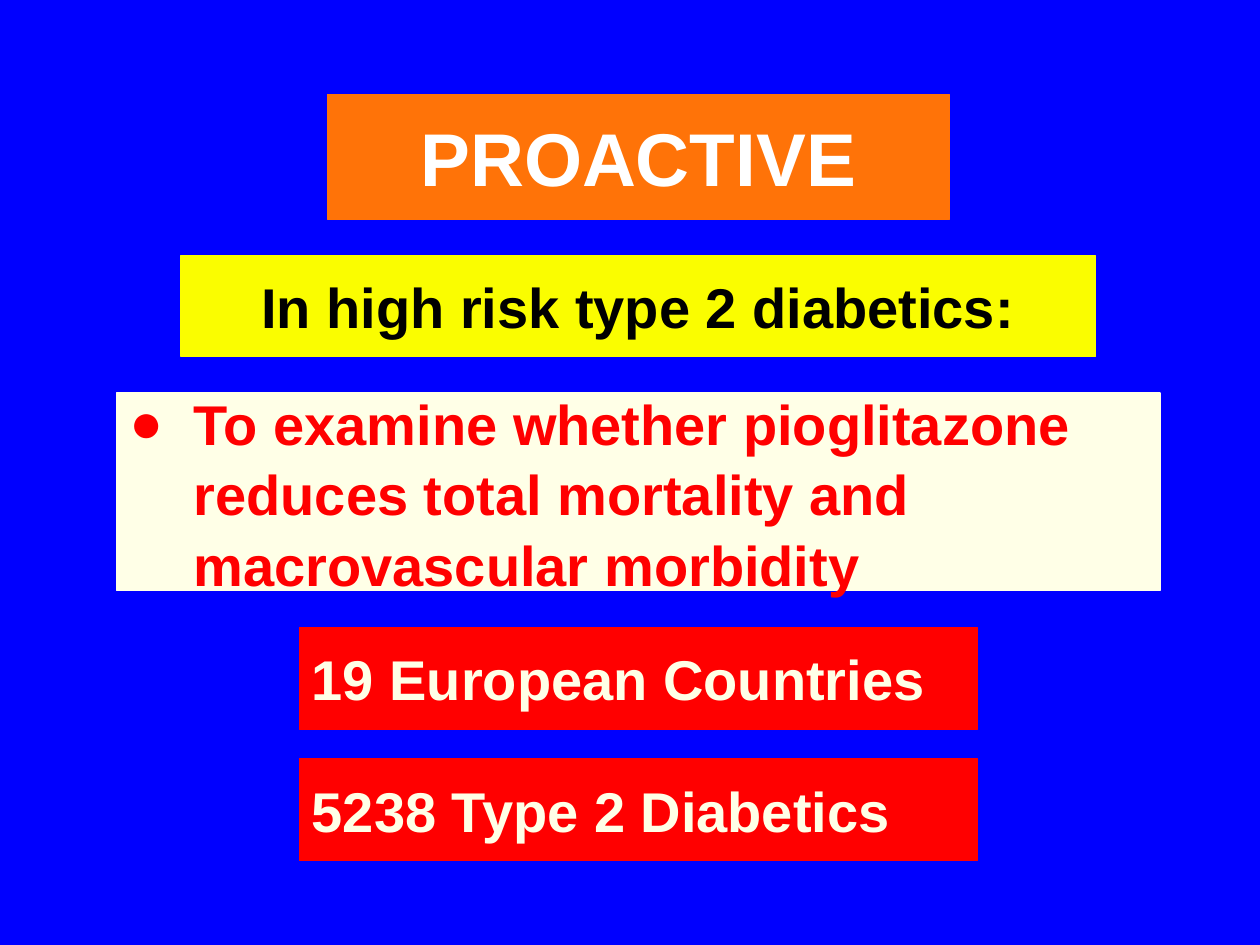
"""Build the PROACTIVE study slide with its title, aim and population boxes."""
from dataclasses import dataclass

from lxml.etree import SubElement
from pptx import Presentation
from pptx.dml.color import RGBColor
from pptx.enum.shapes import MSO_SHAPE as Shape
from pptx.enum.text import MSO_ANCHOR as Anchor, MSO_AUTO_SIZE as AutoSize, PP_ALIGN as Align
from pptx.oxml.ns import qn
from pptx.util import Pt

BLUE, ORANGE, YELLOW = "0000FF", "FF7308", "FAFD00"
RED, CREAM, WHITE, BLACK = "FF0000", "FFFFE7", "FFFFFF", "000000"
CENTRE = 364.8
HANGING = 36.7


@dataclass(frozen=True)
class Panel:
    text: str
    top: float
    width: float
    height: float
    fill: str
    ink: str
    size: float = 32
    align: Align = Align.LEFT
    bullet: str = ""


TITLE = Panel("PROACTIVE", 54, 355.7, 71.3, ORANGE, WHITE, 42.7, Align.CENTER)
AIM = Panel("To examine whether pioglitazone reduces total mortality and macrovascular morbidity",
            224.6, 596.2, 113, CREAM, RED, bullet="●")
GROUP = Panel("In high risk type 2 diabetics:", 146.2, 522.7, 57.6, YELLOW, BLACK,
              align=Align.CENTER)
FACTS = [Panel(text, 358.6 + 74.9 * row, 387.4, 58.3, RED, CREAM)
         for row, text in enumerate(["19 European Countries", "5238 Type 2 Diabetics"])]


def paint(target, colour: str) -> None:
    """Give a fill one solid colour."""
    target.solid()
    target.fore_color.rgb = RGBColor.from_string(colour)


def apply(target, values: dict) -> None:
    """Set each named format value on the target."""
    for name, value in values.items():
        setattr(target, name, value)


def set_bullet(para, bullet: str) -> None:
    """Hang the first line and show the bullet character."""
    props = para._p.get_or_add_pPr()
    props.set("marL", str(Pt(HANGING)))
    props.set("indent", str(-Pt(HANGING)))
    SubElement(props, qn("a:buFont"), typeface="Arial")
    SubElement(props, qn("a:buChar"), char=bullet)


def draw_panel(box, panel: Panel) -> None:
    """Place, colour and letter one panel."""
    apply(box, {"left": Pt(CENTRE - panel.width / 2), "top": Pt(panel.top),
                "width": Pt(panel.width), "height": Pt(panel.height)})
    paint(box.fill, panel.fill)
    paint(box.line.fill, panel.fill)
    box.line.width = Pt(0.75)
    frame = box.text_frame
    apply(frame, {"text": panel.text, "word_wrap": True, "auto_size": AutoSize.NONE,
                  "vertical_anchor": Anchor.MIDDLE})
    para = frame.paragraphs[0]
    apply(para, {"alignment": panel.align, "space_before": Pt(0),
                 "line_spacing": 1.05 if panel.bullet else 1.0})
    if panel.bullet:
        set_bullet(para, panel.bullet)
    span = para.runs[0]
    apply(span.font, {"name": "Arial", "size": Pt(panel.size), "bold": True})
    paint(span.font.fill, panel.ink)


def main() -> None:
    """Create the deck and save it."""
    deck = Presentation()
    apply(deck, {"slide_width": Pt(720), "slide_height": Pt(540)})
    page = deck.slides.add_slide(deck.slide_layouts[1])
    paint(page.background.fill, BLUE)
    draw_panel(page.shapes.title, TITLE)
    draw_panel(page.placeholders[1], AIM)
    for panel in [GROUP, *FACTS]:
        box = page.shapes.add_shape(Shape.RECTANGLE, 0, 0, Pt(panel.width), Pt(panel.height))
        box.shadow.inherit = False
        draw_panel(box, panel)
    deck.save("out.pptx")


if __name__ == "__main__":
    main()
